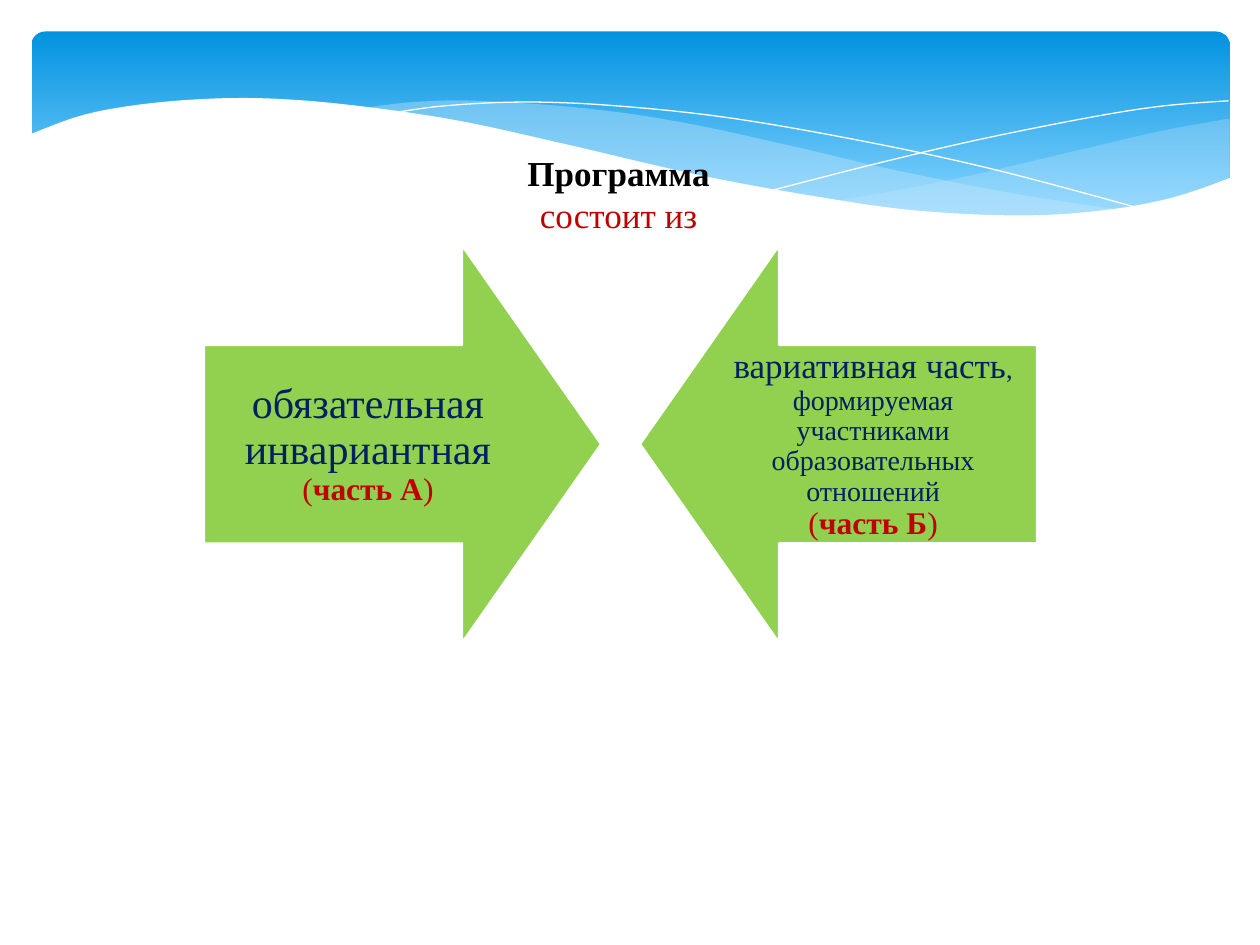
from pptx import Presentation
from pptx.dml.color import RGBColor
from pptx.enum.shapes import MSO_SHAPE as Shape
from pptx.enum.text import MSO_ANCHOR as Anchor, MSO_AUTO_SIZE as AutoSize, PP_ALIGN as Align
from pptx.oxml.ns import qn
from pptx.util import Inches, Pt
from lxml.etree import SubElement

COLORS = {
    "sky": "0293E0", "light": "83D3FE", "mist": "C6E7FC", "white": "FFFFFF",
    "green": "92D050", "navy": "002060", "red": "C00000", "black": "000000",
}


def smooth(knots, steps=6):
    padded = [knots[0], *knots, knots[-1]]
    curve = [knots[0]]
    for a, b, c, d in zip(padded, padded[1:], padded[2:], padded[3:]):
        for step in range(1, steps + 1):
            t = step / steps
            curve.append(tuple(
                (2 * q + (r - p) * t + (2 * p - 5 * q + 4 * r - s) * t ** 2
                 + (3 * q - p - 3 * r + s) * t ** 3) / 2
                for p, q, r, s in zip(a, b, c, d)))
    return curve


class SlideBuilder:
    font = "Times New Roman"

    def __init__(self, slide):
        self.shapes = slide.shapes

    def color(self, name):
        return RGBColor.from_string(COLORS[name])

    def paint(self, shape, name, opacity=None):
        shape.fill.solid()
        shape.fill.fore_color.rgb = self.color(name)
        if opacity:
            tint = shape.fill._xPr.find(qn("a:solidFill"))[0]
            SubElement(tint, qn("a:alpha"), val=str(opacity * 1000))

    def outline(self, shape, name, width):
        shape.line.color.rgb = self.color(name)
        shape.line.width = Pt(width)

    def banner(self, left, top, width, height):
        band = self.shapes.add_shape(Shape.ROUNDED_RECTANGLE, Inches(left), Inches(top),
                                     Inches(width), Inches(height))
        band.shadow.inherit = False
        band.adjustments[0] = 0.07
        band.line.fill.background()
        band.fill.gradient()
        band.fill.gradient_angle = 270
        for stop, name, position in zip(band.fill.gradient_stops, ("sky", "light"), (0, 0.9)):
            stop.color.rgb = self.color(name)
            stop.position = position

    def outline_path(self, points, close):
        start, *rest = [(Inches(x), Inches(y)) for x, y in points]
        builder = self.shapes.build_freeform(*start)
        builder.add_line_segments(rest, close=close)
        path_shape = builder.convert_to_shape()
        path_shape.shadow.inherit = False
        return path_shape

    def wave(self, points, name, opacity=None):
        wave = self.outline_path(points, True)
        self.paint(wave, name, opacity)
        wave.line.fill.background()

    def thread(self, points):
        thread = self.outline_path(points, False)
        thread.fill.background()
        self.outline(thread, "white", 0)

    def arrow(self, left, top, size, rotation):
        arrow = self.shapes.add_shape(Shape.DOWN_ARROW, Inches(left), Inches(top),
                                      Inches(size), Inches(size))
        arrow.shadow.inherit = False
        arrow.rotation = rotation
        arrow.adjustments[0] = 0.5
        arrow.adjustments[1] = 0.35
        self.paint(arrow, "green")
        self.outline(arrow, "white", 1.25)

    def text(self, left, top, width, height, paragraphs, inset=None, spacing=None):
        box = self.shapes.add_textbox(Inches(left), Inches(top), Inches(width), Inches(height))
        frame = box.text_frame
        if inset is None:
            frame.word_wrap = False
            frame.auto_size = AutoSize.SHAPE_TO_FIT_TEXT
        else:
            frame.word_wrap = True
            frame.vertical_anchor = Anchor.MIDDLE
            frame.margin_left = frame.margin_right = Inches(inset)
            frame.margin_top = frame.margin_bottom = Inches(inset)
        for index, runs in enumerate(paragraphs):
            paragraph = frame.paragraphs[0] if index == 0 else frame.add_paragraph()
            paragraph.alignment = Align.CENTER
            paragraph.line_spacing = spacing
            for words, size, name, bold in runs:
                if words == "\n":
                    paragraph.add_line_break()
                    continue
                run = paragraph.add_run()
                run.text = words
                run.font.name = self.font
                run.font.size = Pt(size)
                run.font.bold = bold
                run.font.color.rgb = self.color(name)


def part_label(letter):
    return [("(", 18, "red", False), (f"часть {letter}", 18, "red", True),
            (")", 18, "red", False)]


def main():
    deck = Presentation()
    deck.slide_width, deck.slide_height = Inches(10), Inches(7.5)
    page = SlideBuilder(deck.slides.add_slide(deck.slide_layouts[6]))

    page.banner(0.25, 0.25, 9.51, 1.56)
    page.wave(smooth([(9.76, 0.94), (9.21, 1.04), (8.61, 1.18), (7.53, 1.43), (6.61, 1.6)])
              + smooth([(6.61, 1.6), (7.32, 1.68), (8.03, 1.72), (8.72, 1.69),
                        (9.28, 1.58), (9.76, 1.41)]), "mist", 29)
    page.wave(smooth([(8.93, 1.67), (8.07, 1.54), (7.06, 1.34), (6.29, 1.16), (5.41, 0.97),
                      (4.65, 0.86), (3.8, 0.8), (3.28, 0.81), (2.86, 0.86)])
              + smooth([(2.86, 0.86), (3.62, 0.97), (4.49, 1.16), (5.66, 1.43), (6.5, 1.58),
                        (7.36, 1.69), (8.18, 1.73), (8.93, 1.67)]), "mist", 40)
    page.thread(smooth([(3.09, 0.9), (3.53, 0.84), (4.16, 0.81), (4.89, 0.84), (5.82, 0.94),
                        (6.95, 1.14), (7.95, 1.36), (9.07, 1.66)]))
    page.thread(smooth([(6.13, 1.51), (6.95, 1.3), (7.76, 1.11), (8.66, 0.93),
                        (9.24, 0.84), (9.75, 0.8)]))
    page.wave(smooth([(9.77, 1.41), (9.3, 1.57), (8.75, 1.67), (8.09, 1.71), (7.26, 1.67),
                      (6.48, 1.56), (5.55, 1.39), (4.47, 1.14), (3.65, 0.96), (2.92, 0.85),
                      (2.3, 0.79), (1.77, 0.78), (1.19, 0.82), (0.67, 0.91), (0.23, 1.07)])
              + [(0.23, 2.24), (9.77, 2.24)], "white")

    page.arrow(1.62, 1.95, 3.15, 270)
    page.text(1.62, 2.74, 2.6, 1.58,
              [[("обязательная инвариантная ", 24, "navy", False), *part_label("А")]],
              inset=0.19, spacing=0.9)
    page.arrow(5.08, 1.95, 3.15, 90)
    page.text(5.63, 2.74, 2.6, 1.58,
              [[("вариативная часть", 20, "navy", False), (", ", 15, "navy", False),
                ("формируемая участниками образовательных отношений", 16, "navy", False),
                ("\n", 16, "navy", False), *part_label("Б")]],
              inset=0.16, spacing=0.9)
    page.text(4.08, 1.15, 1.73, 0.77,
              [[("Программа ", 20, "black", True)], [("состоит из ", 20, "red", False)]])

    deck.save("out.pptx")


if __name__ == "__main__":
    main()
